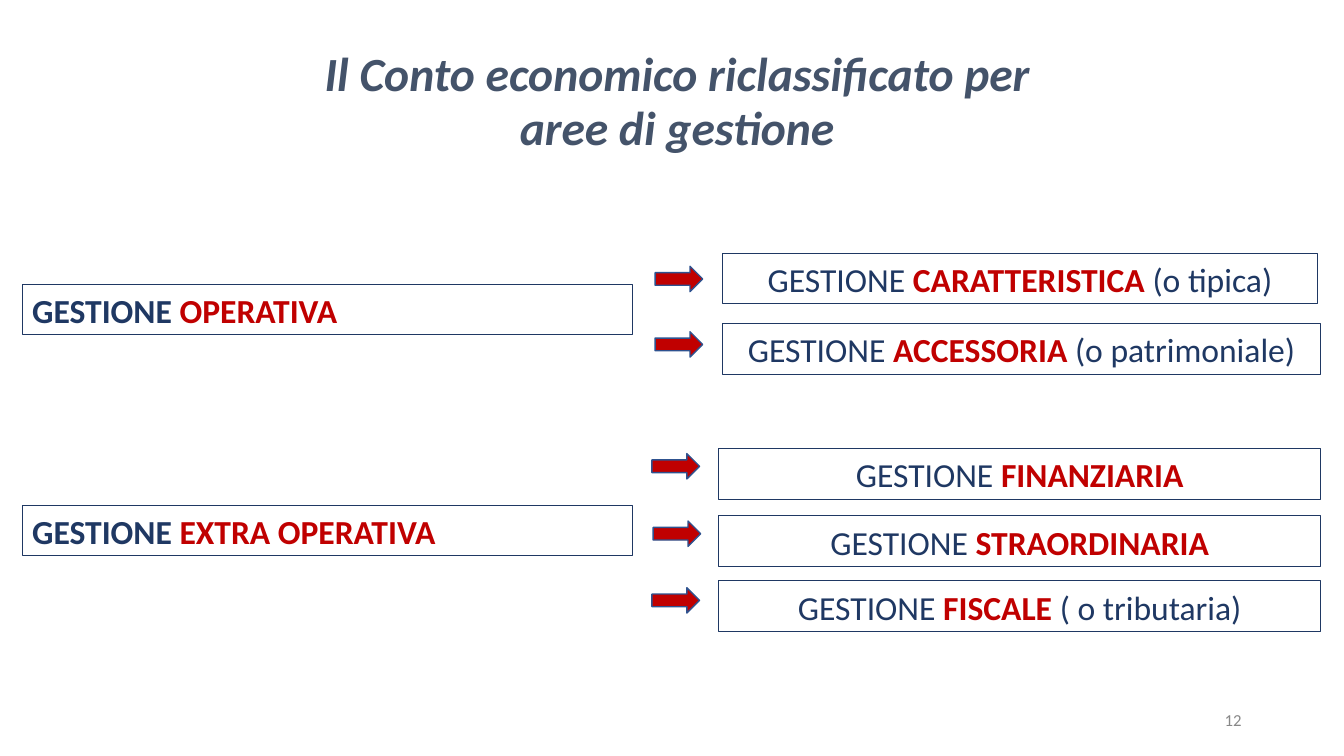
from pptx import Presentation
from pptx.dml.color import RGBColor
from pptx.enum.shapes import MSO_SHAPE
from pptx.enum.text import MSO_ANCHOR, PP_ALIGN
from pptx.util import Cm, Pt

COLORS = {"title": "44536A", "navy": "1F3863", "red": "C00000",
          "arrow_line": "2E528F", "grey": "888888"}

TITLE = {"size": Pt(34), "bold": True, "italic": True}
PLAIN = {"size": Pt(24), "bold": False}
STRONG = {"size": Pt(24), "bold": True}
NUMBER = {"size": Pt(12)}

# Left, top, highlighted word
AREAS = [(7.16, "OPERATIVA"), (12.73, "EXTRA OPERATIVA")]

# Box left, top, width; arrow left, top; highlighted word, ending
DETAILS = [
    (18.2, 6.38, 15.01, 16.51, 6.71, "CARATTERISTICA", " (o tipica)"),
    (18.2, 8.15, 15.09, 16.51, 8.36, "ACCESSORIA", " (o patrimoniale)"),
    (18.12, 11.3, 15.16, 16.43, 11.43, "FINANZIARIA", ""),
    (18.12, 13.0, 15.16, 16.46, 13.13, "STRAORDINARIA", ""),
    (18.12, 14.63, 15.16, 16.43, 14.81, "FISCALE", " ( o tributaria)"),
]


def rgb(name):
    return RGBColor.from_string(COLORS[name])


def set_frame(sp, left=0.0, top=0.0):
    tf = sp.text_frame
    frame = {"word_wrap": True, "vertical_anchor": MSO_ANCHOR.TOP,
             "margin_left": Cm(left), "margin_top": Cm(top),
             "margin_right": 0, "margin_bottom": 0}
    for name, value in frame.items():
        setattr(tf, name, value)
    return tf


def add_run(p, text, color, style):
    r = p.add_run()
    r.text = text
    r.font.name = "Calibri"
    r.font.color.rgb = rgb(color)
    for name, value in style.items():
        setattr(r.font, name, value)


def add_text(s, box, lines, color, style, align, spacing, left, top=0.0):
    sp = s.shapes.add_textbox(*map(Cm, box))
    tf = set_frame(sp, left, top)
    for i, line in enumerate(lines):
        p = tf.add_paragraph() if i else tf.paragraphs[0]
        p.alignment = align
        p.line_spacing = Pt(spacing)
        add_run(p, line, color, style)


def add_box(s, left, top, width, runs, align, indent=0.0):
    sp = s.shapes.add_shape(MSO_SHAPE.RECTANGLE, Cm(left), Cm(top), Cm(width), Cm(1.28))
    sp.shadow.inherit = False
    sp.fill.background()
    sp.line.color.rgb = rgb("navy")
    sp.line.width = Pt(0.72)
    p = set_frame(sp, indent, 0.15).paragraphs[0]
    p.alignment = align
    for text, color, style in runs:
        add_run(p, text, color, style)


def add_arrow(s, left, top):
    sp = s.shapes.add_shape(MSO_SHAPE.RIGHT_ARROW, Cm(left), Cm(top), Cm(1.2), Cm(0.64))
    sp.shadow.inherit = False
    sp.fill.solid()
    sp.fill.fore_color.rgb = rgb("red")
    sp.line.color.rgb = rgb("arrow_line")
    sp.line.width = Pt(0.96)


def main():
    prs = Presentation()
    prs.slide_width, prs.slide_height = Cm(33.87), Cm(19.05)
    s = prs.slides.add_slide(prs.slide_layouts[6])

    # Title
    add_text(s, (3.15, 1.12, 27.58, 2.79),
             ["Il Conto economico riclassificato per", "aree di gestione"],
             "title", TITLE, PP_ALIGN.CENTER, 38.8, 0.25, 0.06)

    # Management areas
    for top, word in AREAS:
        add_box(s, 0.56, top, 15.39,
                [("GESTIONE ", "navy", STRONG), (word, "red", STRONG)],
                PP_ALIGN.LEFT, 0.25)

    # Components of each area, with their arrows
    for left, top, width, arrow_left, arrow_top, word, ending in DETAILS:
        runs = [("GESTIONE ", "navy", PLAIN), (word, "red", STRONG)]
        if ending:
            runs.append((ending, "navy", PLAIN))
        add_box(s, left, top, width, runs, PP_ALIGN.CENTER)
        add_arrow(s, arrow_left, arrow_top)

    # Slide number
    add_text(s, (30.78, 17.96, 0.58, 0.48), ["12"], "grey", NUMBER,
             PP_ALIGN.LEFT, 12.4, 0.08)

    prs.save("out.pptx")


if __name__ == "__main__":
    main()
